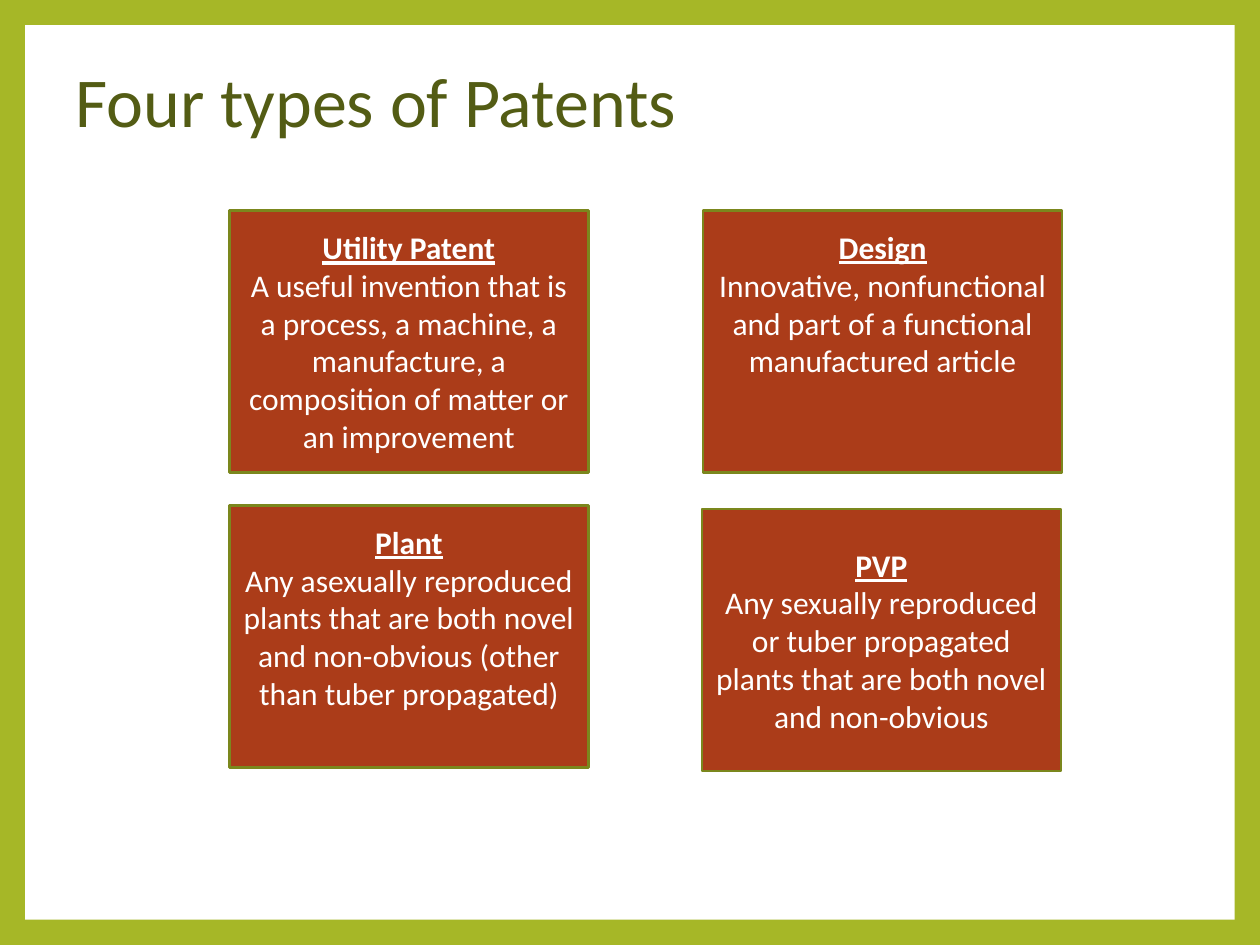
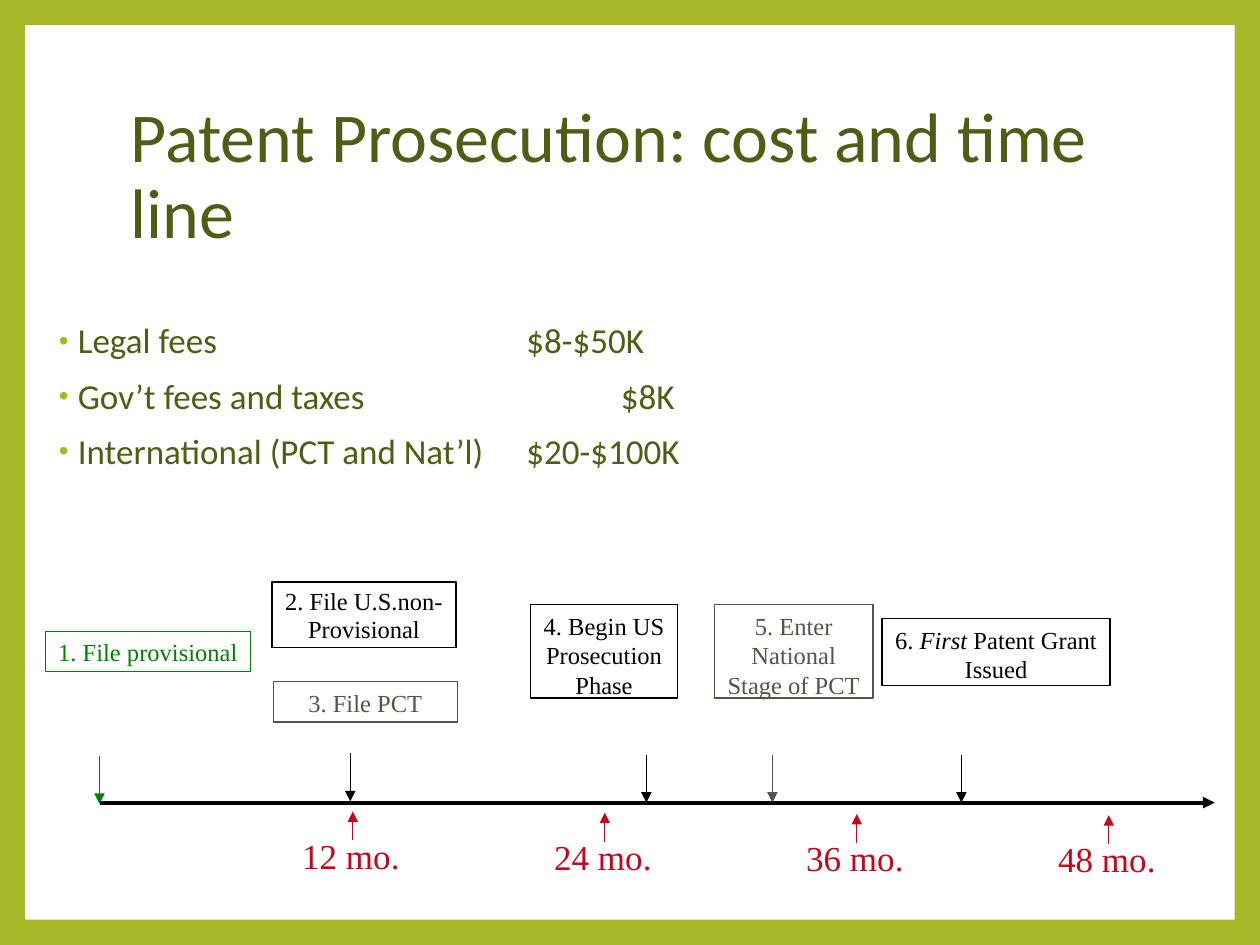
"""Build two slides on patent types and the patent time line."""
import dataclasses
import typing

import lxml.etree
import pptx
import pptx.dml.color
import pptx.enum.shapes
import pptx.enum.text
import pptx.oxml.ns
import pptx.slide
import pptx.text.text
import pptx.util

RGBColor = pptx.dml.color.RGBColor
Align = pptx.enum.text.PP_ALIGN
Anchor = pptx.enum.text.MSO_ANCHOR
qn = pptx.oxml.ns.qn

LIME = RGBColor(0xA6, 0xB7, 0x27)
MOSS = RGBColor(0x53, 0x5C, 0x14)
OLIVE = RGBColor(0x7B, 0x87, 0x1D)
RUST = RGBColor(0xAB, 0x3C, 0x19)
WHITE = RGBColor(0xFF, 0xFF, 0xFF)
BLACK = RGBColor(0, 0, 0)
GREEN = RGBColor(0, 0x80, 0)
GREY = RGBColor(0x56, 0x53, 0x49)
RED = RGBColor(0xC8, 0x04, 0x1B)
SANS, SERIF = "Calibri", "Times New Roman"

WIDE, HIGH = pptx.util.Inches(10), pptx.util.Inches(7.5)
COL, ROW = WIDE / 100, HIGH / 75


class Area(typing.NamedTuple):
    """A place on the grid, in columns and rows."""
    col: float
    row: float
    cols: float
    rows: float

    def emu(self) -> tuple[int, int, int, int]:
        """Give the place in slide units."""
        return (round(self.col * COL), round(self.row * ROW),
                round(self.cols * COL), round(self.rows * ROW))


class Run(typing.NamedTuple):
    """A piece of text in one style."""
    text: str
    head: bool = False
    slant: bool = False


@dataclasses.dataclass(frozen=True)
class Card:
    """A patent type, with the rows left free below its text."""
    name: str
    body: str
    col: float
    row: float
    free: float = 0


@dataclasses.dataclass(frozen=True)
class Step:
    """A boxed step above the time line."""
    area: Area
    color: RGBColor
    lines: tuple[str | tuple[Run, ...], ...]
    lead: float = 1
    wrap: bool = False


@dataclasses.dataclass(frozen=True)
class Mark:
    """An arrow down to the time line."""
    col: float
    row: float
    color: RGBColor = BLACK


CARDS = (
    Card("Utility Patent", "A useful invention that is a process, a machine, a "
         "manufacture, a composition of matter or an improvement", 18.2, 16.7),
    Card("Plant", "Any asexually reproduced plants that are both novel and "
         "non-obvious (other than tuber propagated)", 18.2, 40.1, 3),
    Card("Design", "Innovative, nonfunctional and part of a functional "
         "manufactured article", 55.8, 16.7, 6),
    Card("PVP", "Any sexually reproduced or tuber propagated plants that are "
         "both novel and non-obvious", 55.7, 40.4),
)
FEES = (
    ("Legal fees", "$8-$50K", 3.75),
    ("Gov’t fees and taxes", "$8K", 4.5),
    ("International (PCT and Nat’l)", "$20-$100K", 3.75),
)
STEPS = (
    Step(Area(3.6, 50.1, 16.3, 3.2), GREEN, ("1. File provisional",)),
    Step(Area(21.6, 46.2, 14.6, 5.2), BLACK,
         ("2. File U.S.non-", "Provisional"), lead=0.95),
    Step(Area(21.7, 54.1, 14.6, 3.2), GREY, ("3. File PCT",), wrap=True),
    Step(Area(42.1, 48, 11.7, 7.4), BLACK,
         ("4. Begin US", "Prosecution", "Phase")),
    Step(Area(56.7, 48, 12.6, 7.4), GREY,
         ("5. Enter", "National", "Stage of PCT")),
    Step(Area(70, 49.1, 18.1, 5.3), BLACK,
         ((Run("6. "), Run("First", slant=True), Run(" Patent Grant")), "Issued")),
)
MARKS = (Mark(7.9, 60, GREEN), Mark(27.8, 59.8), Mark(51.3, 59.9),
         Mark(61.3, 59.9, GREY), Mark(76.3, 59.9))


def write(frame: pptx.text.text.TextFrame, lines: typing.Iterable, *,
          size: float, color: RGBColor, font: str = SANS,
          align: Align = Align.LEFT, anchor: Anchor = Anchor.TOP,
          lead: float = 1, above: float = 0, wrap: bool = True) -> None:
    """Fill a frame with lines, each a string or a row of runs."""
    frame.word_wrap = wrap
    frame.vertical_anchor = anchor
    for spot, line in enumerate(lines):
        para = frame.add_paragraph() if spot else frame.paragraphs[0]
        para.alignment = align
        para.line_spacing = lead
        para.space_before = pptx.util.Pt(above)
        for piece in (Run(line),) if isinstance(line, str) else line:
            run = para.add_run()
            run.text = piece.text
            run.font.name, run.font.size = font, pptx.util.Pt(size)
            run.font.color.rgb = color
            run.font.bold = run.font.underline = piece.head
            run.font.italic = piece.slant


def label(slide: pptx.slide.Slide, area: Area, lines: typing.Iterable,
          **form: typing.Any) -> pptx.text.text.TextFrame:
    """Add a text box and return its frame."""
    frame = slide.shapes.add_textbox(*area.emu()).text_frame
    write(frame, lines, **form)
    return frame


def panel(slide: pptx.slide.Slide, area: Area, fill: RGBColor | None = None,
          edge: RGBColor | None = None,
          weight: float = 0.75) -> pptx.text.text.TextFrame:
    """Add a flat rectangle and return its text frame."""
    kind = pptx.enum.shapes.MSO_SHAPE.RECTANGLE
    shape = slide.shapes.add_shape(kind, *area.emu())
    shape.shadow.inherit = False
    if fill is None:
        shape.fill.background()
    else:
        shape.fill.solid()
        shape.fill.fore_color.rgb = fill
    if edge is None:
        shape.line.fill.background()
    else:
        shape.line.color.rgb = edge
        shape.line.width = pptx.util.Pt(weight)
    return shape.text_frame


def arrow(slide: pptx.slide.Slide, start: tuple[float, float],
          stop: tuple[float, float], color: RGBColor,
          weight: float = 0.75) -> None:
    """Draw an arrow between two grid points."""
    ends = [round(step * unit) for point in (start, stop)
            for step, unit in zip(point, (COL, ROW))]
    kind = pptx.enum.shapes.MSO_CONNECTOR.STRAIGHT
    line = slide.shapes.add_connector(kind, *ends)
    line.line.color.rgb = color
    line.line.width = pptx.util.Pt(weight)
    props = line.element.spPr
    lxml.etree.SubElement(props.find(qn("a:ln")), qn("a:tailEnd"), type="triangle")
    lxml.etree.SubElement(props, qn("a:effectLst"))


def bullet(para: typing.Any, stop: float) -> None:
    """Give a paragraph a hanging bullet and a tab stop in inches."""
    props = para._p.get_or_add_pPr()
    props.set("marL", str(pptx.util.Inches(0.19)))
    props.set("indent", str(pptx.util.Inches(-0.15)))
    tint = lxml.etree.SubElement(props, qn("a:buClr"))
    lxml.etree.SubElement(tint, qn("a:srgbClr"), val=str(LIME))
    lxml.etree.SubElement(props, qn("a:buSzPct"), val="80000")
    lxml.etree.SubElement(props, qn("a:buFont"), typeface="Arial")
    lxml.etree.SubElement(props, qn("a:buChar"), char="•")
    tabs = lxml.etree.SubElement(props, qn("a:tabLst"))
    lxml.etree.SubElement(tabs, qn("a:tab"), pos=str(pptx.util.Inches(stop)), algn="l")


def begin(deck: typing.Any, title: str, area: Area) -> pptx.slide.Slide:
    """Add a slide with the green frame and a title."""
    slide = deck.slides.add_slide(deck.slide_layouts[6])
    slide.background.fill.solid()
    slide.background.fill.fore_color.rgb = LIME
    panel(slide, Area(2, 2, 96, 71), WHITE)
    label(slide, area, [title], size=40, color=MOSS, anchor=Anchor.MIDDLE, lead=0.9)
    return slide


def types(deck: typing.Any) -> None:
    """Build the slide of the four patent types."""
    slide = begin(deck, "Four types of Patents", Area(5, 2.1, 90, 12.5))
    for card in CARDS:
        frame = panel(slide, Area(card.col, card.row, 28.5, 20.8), RUST, OLIVE, 1.5)
        frame.margin_bottom = round((0.5 + card.free) * ROW)
        write(frame, [(Run(card.name, head=True),), card.body], size=18,
              color=WHITE, align=Align.CENTER, anchor=Anchor.MIDDLE)


def costs(deck: typing.Any) -> None:
    """Build the slide of costs and the time line."""
    slide = begin(deck, "Patent Prosecution: cost and time line",
                  Area(9.4, 6.7, 81, 14.8))
    frame = label(slide, Area(3.3, 25.2, 95, 16.1),
                  [f"{name}\t{cost}" for name, cost, _ in FEES],
                  size=20, color=MOSS, lead=0.9, above=10)
    for para, (_, _, stop) in zip(frame.paragraphs, FEES):
        bullet(para, stop)

    arrow(slide, (7.9, 63.7), (96.4, 63.7), BLACK, 2.25)
    for mark in MARKS:
        arrow(slide, (mark.col, mark.row), (mark.col, mark.row + 3.8), mark.color)
    for step in STEPS:
        write(panel(slide, step.area, edge=step.color), step.lines, size=14,
              color=step.color, font=SERIF, align=Align.CENTER,
              lead=step.lead, wrap=step.wrap)
    for year in range(4):
        col, drop = 28 + 20 * year, 0.1 * year
        label(slide, Area(col - 5, 65.7 + drop, 9.7, 4), [f"{12 * (year + 1)} mo."],
              size=20, color=RED, font=SERIF, wrap=False)
        arrow(slide, (col, 66.7 + drop), (col, 64.4 + drop), RED)


def main() -> None:
    """Build and save the deck."""
    deck = pptx.Presentation()
    deck.slide_width, deck.slide_height = WIDE, HIGH
    types(deck)
    costs(deck)
    deck.save("out.pptx")


if __name__ == "__main__":
    main()
